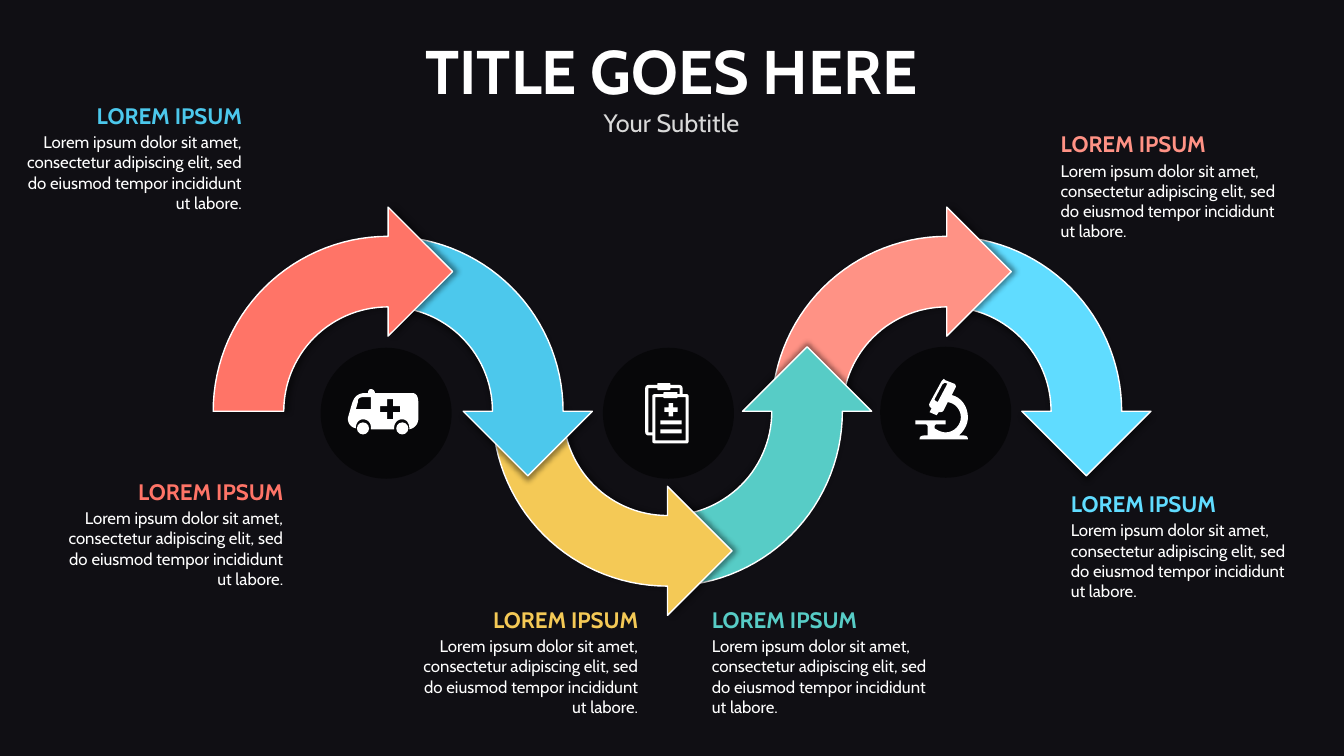
from dataclasses import dataclass
from math import cos, radians, sin

from lxml.etree import SubElement
from pptx import Presentation
from pptx.dml.color import RGBColor
from pptx.enum.shapes import MSO_SHAPE as Preset
from pptx.enum.text import MSO_ANCHOR as Anchor, MSO_AUTO_SIZE as AutoSize, PP_ALIGN as Align
from pptx.oxml.ns import qn
from pptx.util import Inches, Pt


@dataclass(frozen=True)
class Theme:
    font: str = "Cabin"
    backdrop: str = "524E67"
    black: str = "000000"
    white: str = "FFFFFF"
    subtitle: str = "D9D9D9"
    coral: str = "FF7467"
    blue: str = "4CC8EC"
    yellow: str = "F4C956"
    teal: str = "57CCC6"
    pink: str = "FF9285"
    sky: str = "60DCFF"
    title_size: int = 44
    subtitle_size: int = 18
    heading_size: int = 16
    body_size: int = 12


THEME = Theme()
WIDTH, HEIGHT = 13.33, 7.5

TITLE, SUBTITLE = "TITLE GOES HERE", "Your Subtitle"
HEADING = "LOREM IPSUM"
BODY = ("Lorem ipsum dolor sit amet, consectetur adipiscing elit, "
        "sed do eiusmod tempor incididunt ut labore.")

# left, top, alignment, heading colour
CALLOUTS = [
    (10.55, 4.83, Align.LEFT, THEME.sky),
    (6.99, 5.98, Align.LEFT, THEME.teal),
    (3.99, 5.98, Align.RIGHT, THEME.yellow),
    (0.47, 4.71, Align.RIGHT, THEME.coral),
    (0.06, 0.98, Align.RIGHT, THEME.blue),
    (10.45, 1.26, Align.LEFT, THEME.pink),
]
CALLOUT_SIZE = (2.41, 1.18)

# The wave: arches stand side by side, each made of two quarter-ring arrows.
ARCH_X, ARCH_STEP, ARCH_Y = 3.85, 2.77, 4.08
OUTER, INNER, HEAD = 1.735, 1.035, 0.64
# arch, start angle, turn (+1 clockwise), colour; from back to front
ARROWS = [
    (2, 270, 1, THEME.sky),
    (2, 180, 1, THEME.pink),
    (1, 90, -1, THEME.teal),
    (1, 180, -1, THEME.yellow),
    (0, 270, 1, THEME.blue),
    (0, 180, 1, THEME.coral),
]

# Icons, in hundredths of an inch from the centre of their disc.
# A pair is a corner, six numbers are a Bézier curve.
AMBULANCE = [
    [(26, -20), (-11, -20), (-11, -22, -13, -24, -15, -24), (-17, -24, -18, -22, -18, -20),
     (-21, -20), (-27, -20, -32, -17, -34, -9), (-38, 5), (-38, 10, -35, 14, -30, 15),
     (-30, 14), (-30, 10, -27, 6, -23, 6), (-18, 6, -15, 10, -15, 14), (-15, 16), (8, 16),
     (8, 14), (8, 10, 11, 6, 16, 6), (20, 6, 23, 10, 23, 14), (23, 16),
     (28, 15, 32, 11, 32, 5), (32, -9), (32, -15, 31, -20, 26, -20)],
    [(-15, -4), (-30, -4), (-28, -11), (-28, -11, -28, -12, -28, -13),
     (-27, -16, -23, -16, -23, -16), (-15, -16)],
    [(14, -1), (7, -1), (7, 6), (1, 6), (1, -1), (-6, -1), (-6, -7), (1, -7),
     (1, -14), (7, -14), (7, -7), (14, -7)],
]
CLIPBOARD = [
    [(18, -19), (14, -19), (14, -25), (14, -27, 12, -28, 11, -28), (2, -28),
     (2, -29, 2, -30, 1, -30), (-10, -30), (-11, -30, -11, -29, -11, -28), (-20, -28),
     (-21, -28, -23, -27, -23, -25), (-23, 19), (-23, 21, -21, 22, -20, 22), (-16, 22),
     (-16, 28), (-16, 29, -15, 30, -13, 30), (18, 30), (19, 30, 20, 29, 20, 28),
     (20, -17), (20, -18, 19, -19, 18, -19)],
    [(-16, -17), (-16, 19), (-20, 19), (-20, -25), (-11, -25), (-11, -24),
     (-11, -24, -11, -23, -10, -23), (1, -23), (2, -23, 2, -24, 2, -24), (2, -25),
     (11, -25), (11, -19), (9, -19), (9, -20), (9, -21, 9, -21, 8, -21), (-3, -21),
     (-4, -21, -5, -21, -5, -20), (-5, -19), (-13, -19), (-15, -19, -16, -18, -16, -17)],
    [(17, 27), (-13, 27), (-13, -16), (-5, -16), (-5, -15, -4, -15, -3, -15), (8, -15),
     (9, -15, 9, -16, 9, -16), (17, -16)],
]
MICROSCOPE = [
    [(15, 23), (13, 23), (18, 19, 22, 12, 22, 5), (22, -6, 15, -15, 6, -17), (10, -25),
     (10, -26, 10, -27, 9, -28), (-1, -32), (-1, -33, -2, -33, -2, -33),
     (-3, -32, -3, -32, -4, -31), (-16, -9), (-17, -7, -16, -5, -14, -4), (-16, 0), (-9, 3),
     (-7, 0), (-5, 0, -3, 0, -2, -2), (2, -10), (9, -9, 15, -3, 15, 5),
     (15, 13, 8, 20, 0, 20), (-4, 20, -8, 18, -11, 16), (-11, 14),
     (-11, 13, -10, 12, -9, 12), (0, 12), (0, 8), (-30, 8), (-30, 12), (-20, 12),
     (-19, 12, -18, 13, -18, 14), (-18, 23), (-23, 23, -26, 23, -26, 27), (22, 27),
     (22, 23, 19, 23, 15, 23)],
    [(2, -28), (1, -28, 1, -27, 1, -27), (-8, -10), (-11, -12), (-11, -13), (-3, -28),
     (-2, -28, -2, -29, -1, -29), (0, -29)],
]
DISC = 1.3
# disc centre, outline, extra parts (preset, left, top, width, height)
ICONS = [
    ((6.63, 4.10), CLIPBOARD, [(Preset.RECTANGLE, -8, 7, 21, 4),
                               (Preset.RECTANGLE, -8, 16, 21, 4),
                               (Preset.CROSS, -4, -10, 13, 13)]),
    ((3.83, 4.10), AMBULANCE, [(Preset.OVAL, -29, 9, 12, 12), (Preset.OVAL, 10, 9, 12, 12)]),
    ((9.38, 4.09), MICROSCOPE, []),
]


def paint(shape, color, opacity=100):
    shape.shadow.inherit = False
    shape.fill.solid()
    shape.fill.fore_color.rgb = RGBColor.from_string(color)
    shape.line.fill.background()
    if opacity < 100:
        tint = shape._element.spPr.find(".//" + qn("a:srgbClr"))
        SubElement(tint, qn("a:alpha"), val=str(opacity * 1000))
    return shape


def add_preset(shapes, preset, *box):
    return shapes.add_shape(preset, *map(Inches, box))


def add_outline(shapes, contours):
    """Draw closed contours, given in inches, as one shape."""
    emu = [[(Inches(x), Inches(y)) for x, y in contour] for contour in contours]
    builder = shapes.build_freeform(*emu[0][0], scale=1.0)
    builder.add_line_segments(emu[0][1:], close=True)
    for contour in emu[1:]:
        builder.move_to(*contour[0])
        builder.add_line_segments(contour[1:], close=True)
    return builder.convert_to_shape()


def flatten(contour, center, steps=8):
    """Turn corners and curves into points in inches around the centre."""
    points = []
    for piece in contour:
        if len(piece) == 2:
            points.append(piece)
            continue
        knots = [points[-1], piece[:2], piece[2:4], piece[4:]]
        for t in (step / steps for step in range(1, steps + 1)):
            weights = ((1 - t) ** 3, 3 * t * (1 - t) ** 2, 3 * t * t * (1 - t), t ** 3)
            points.append(tuple(sum(w * k[axis] for w, k in zip(weights, knots))
                                for axis in (0, 1)))
    return [(center[0] + x / 100, center[1] + y / 100) for x, y in points]


def add_arrow(shapes, arch, start, turn, color):
    center_x = ARCH_X + arch * ARCH_STEP

    def polar(radius, angle, ahead=0):
        a = radians(angle)
        return (center_x + radius * cos(a) - turn * ahead * sin(a),
                ARCH_Y + radius * sin(a) + turn * ahead * cos(a))

    angles = [start + turn * degree for degree in range(0, 91, 3)]
    end, middle = angles[-1], (OUTER + INNER) / 2
    head = [polar(middle + HEAD, end), polar(middle, end, HEAD), polar(middle - HEAD, end)]
    arrow = add_outline(shapes, [[polar(OUTER, a) for a in angles] + head
                                 + [polar(INNER, a) for a in reversed(angles)]])
    paint(arrow, color)
    arrow.line.color.rgb = RGBColor.from_string(THEME.white)
    arrow.line.width = Pt(1)
    heading = (end + 90 * turn) % 360
    shadow = SubElement(arrow._element.spPr.find(qn("a:effectLst")), qn("a:outerShdw"),
                        blurRad=str(Pt(4)), dist=str(Pt(3)), dir=str(heading * 60000),
                        algn="ctr", rotWithShape="0")
    SubElement(SubElement(shadow, qn("a:srgbClr"), val=THEME.black), qn("a:alpha"), val="40000")


def write(frame, lines, align, gap=0):
    """Fill a frame with lines of (text, size, colour, bold)."""
    for index, (text, size, color, bold) in enumerate(lines):
        line = frame.add_paragraph() if index else frame.paragraphs[0]
        line.text, line.alignment = text, align
        if index and gap:
            line.space_before = Pt(gap)
        line.font.name, line.font.size, line.font.bold = THEME.font, Pt(size), bold
        line.font.color.rgb = RGBColor.from_string(color)


def main():
    deck = Presentation()
    deck.slide_width, deck.slide_height = Inches(WIDTH), Inches(HEIGHT)
    slide = deck.slides.add_slide(deck.slide_layouts[5])
    shapes = slide.shapes
    slide.background.fill.solid()
    slide.background.fill.fore_color.rgb = RGBColor.from_string(THEME.backdrop)
    veil = paint(add_preset(shapes, Preset.RECTANGLE, 0, 0, WIDTH, HEIGHT), THEME.black, 80)
    shapes.title._element.addprevious(veil._element)

    title = shapes.title
    title.left, title.top, title.width, title.height = map(Inches, (3.65, 0.28, 6.02, 1.14))
    title.text_frame.vertical_anchor = Anchor.TOP
    title.text_frame.auto_size = AutoSize.SHAPE_TO_FIT_TEXT
    write(title.text_frame, [(TITLE, THEME.title_size, THEME.white, True),
                             (SUBTITLE, THEME.subtitle_size, THEME.subtitle, False)], Align.CENTER)

    for arrow in ARROWS:
        add_arrow(shapes, *arrow)

    for left, top, align, color in CALLOUTS:
        frame = shapes.add_textbox(*map(Inches, (left, top, *CALLOUT_SIZE))).text_frame
        frame.word_wrap, frame.auto_size = True, AutoSize.SHAPE_TO_FIT_TEXT
        frame.margin_left = frame.margin_right = Inches(0.07)
        frame.margin_top = frame.margin_bottom = Inches(0.03)
        write(frame, [(HEADING, THEME.heading_size, color, True),
                      (BODY, THEME.body_size, THEME.white, False)], align, gap=2.4)

    for (x, y), outline, parts in ICONS:
        disc = add_preset(shapes, Preset.OVAL, x - DISC / 2, y - DISC / 2, DISC, DISC)
        paint(disc, THEME.black, 50)
        icon = shapes.add_group_shape().shapes if parts else shapes
        paint(add_outline(icon, [flatten(contour, (x, y)) for contour in outline]), THEME.white)
        for preset, left, top, width, height in parts:
            part = add_preset(icon, preset, x + left / 100, y + top / 100,
                              width / 100, height / 100)
            paint(part, THEME.white)
            if preset == Preset.CROSS:
                part.adjustments[0] = 0.33

    deck.save("out.pptx")


if __name__ == "__main__":
    main()
